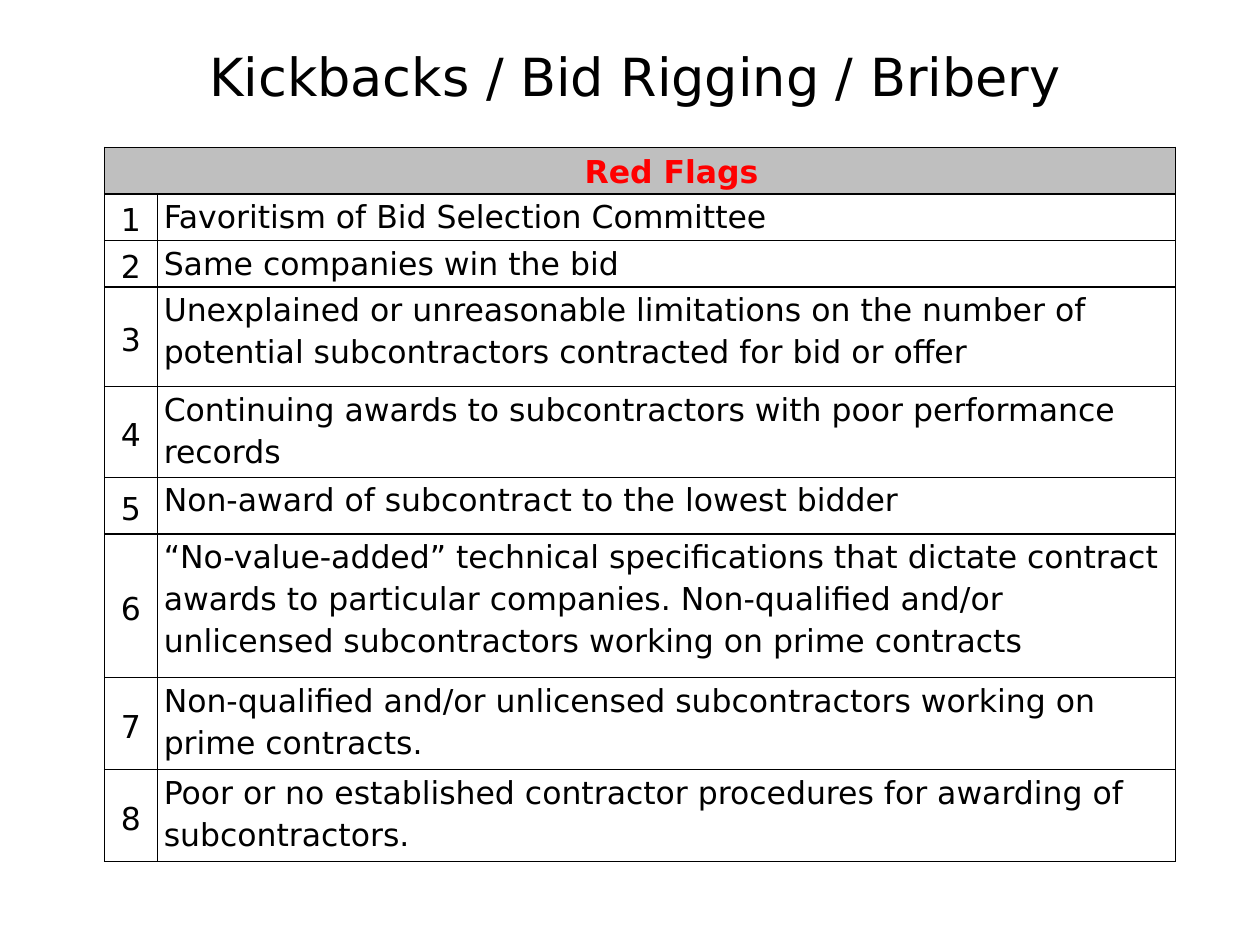
from pptx import Presentation
from pptx.dml.color import RGBColor
from pptx.enum.text import MSO_ANCHOR, PP_ALIGN
from pptx.oxml import parse_xml
from pptx.oxml.ns import nsdecls
from pptx.util import Inches, Pt

COLORS = {"ink": "000000", "flag": "FF0000", "header": "BFBFBF", "paper": "FFFFFF"}
FONT = "DejaVu Sans"
SLIDE_WIDTH, SLIDE_HEIGHT = Inches(10), Inches(7.5)
COLUMNS = [0.42, 8.08]
ROWS = [0.37, 0.37, 0.37, 0.79, 0.72, 0.45, 1.14, 0.73, 0.73]
FLAGS = [
    "Favoritism of Bid Selection Committee",
    "Same companies win the bid",
    "Unexplained or unreasonable limitations on the number of potential "
    "subcontractors contracted for bid or offer",
    "Continuing awards to subcontractors with poor performance records",
    "Non-award of subcontract to the lowest bidder",
    "“No-value-added” technical specifications that dictate contract awards to "
    "particular companies. Non-qualified and/or unlicensed subcontractors "
    "working on prime contracts",
    "Non-qualified and/or unlicensed subcontractors working on prime contracts.",
    "Poor or no established contractor procedures for awarding of subcontractors.",
]


def write_text(frame, text, size=18, color="ink", bold=False,
               align=PP_ALIGN.LEFT, spacing=1.15, indent=0):
    para = frame.paragraphs[0]
    para.alignment = align
    para.line_spacing = spacing
    if indent:
        properties = para._p.get_or_add_pPr()
        properties.set("marL", str(Inches(indent)))
        properties.set("indent", "0")
    span = para.add_run()
    span.text = text
    span.font.name = FONT
    span.font.size = Pt(size)
    span.font.bold = bold
    span.font.color.rgb = RGBColor.from_string(COLORS[color])


def format_cell(cell, fill="paper", anchor=MSO_ANCHOR.TOP):
    cell.margin_left = cell.margin_right = Inches(0.05)
    cell.margin_top = cell.margin_bottom = 0
    cell.vertical_anchor = anchor
    properties = cell._tc.get_or_add_tcPr()
    for side in ("lnL", "lnR", "lnT", "lnB"):
        properties.append(parse_xml(
            f'<a:{side} {nsdecls("a")} w="{Pt(1)}"><a:solidFill>'
            f'<a:srgbClr val="{COLORS["ink"]}"/></a:solidFill></a:{side}>'))
    cell.fill.solid()
    cell.fill.fore_color.rgb = RGBColor.from_string(COLORS[fill])


def place_title(page, left, top, width, height):
    title = page.shapes.title
    title.left, title.top, title.width, title.height = left, top, width, height
    title.text_frame.word_wrap = True
    title.text_frame.vertical_anchor = MSO_ANCHOR.MIDDLE
    write_text(title.text_frame, "Kickbacks / Bid Rigging / Bribery",
               size=30, align=PP_ALIGN.CENTER, spacing=0.9)


def place_flags(page, left, top, width, height):
    table = page.shapes.add_table(
        len(ROWS), len(COLUMNS), left, top, width, height).table
    for column, share in zip(table.columns, COLUMNS):
        column.width = int(width * share / sum(COLUMNS))
    for row, share in zip(table.rows, ROWS):
        row.height = int(height * share / sum(ROWS))

    header = table.cell(0, 0)
    header.merge(table.cell(0, 1))
    for cell in table.rows[0].cells:
        format_cell(cell, fill="header")
    write_text(header.text_frame, "Red Flags", color="flag", bold=True,
               align=PP_ALIGN.CENTER, spacing=1.2, indent=0.5)

    for number, flag in enumerate(FLAGS, start=1):
        number_cell, flag_cell = table.cell(number, 0), table.cell(number, 1)
        format_cell(number_cell, anchor=MSO_ANCHOR.MIDDLE)
        format_cell(flag_cell)
        write_text(number_cell.text_frame, str(number),
                   align=PP_ALIGN.CENTER, spacing=1.2)
        write_text(flag_cell.text_frame, flag)


def main():
    deck = Presentation()
    deck.slide_width, deck.slide_height = SLIDE_WIDTH, SLIDE_HEIGHT
    page = deck.slides.add_slide(deck.slide_layouts.get_by_name("Title Only"))
    place_title(page, Inches(0.92), Inches(0.17), Inches(8.25), Inches(0.92))
    place_flags(page, Inches(0.83), Inches(1.17),
                Inches(sum(COLUMNS)), Inches(sum(ROWS)))
    deck.save("out.pptx")


if __name__ == "__main__":
    main()
